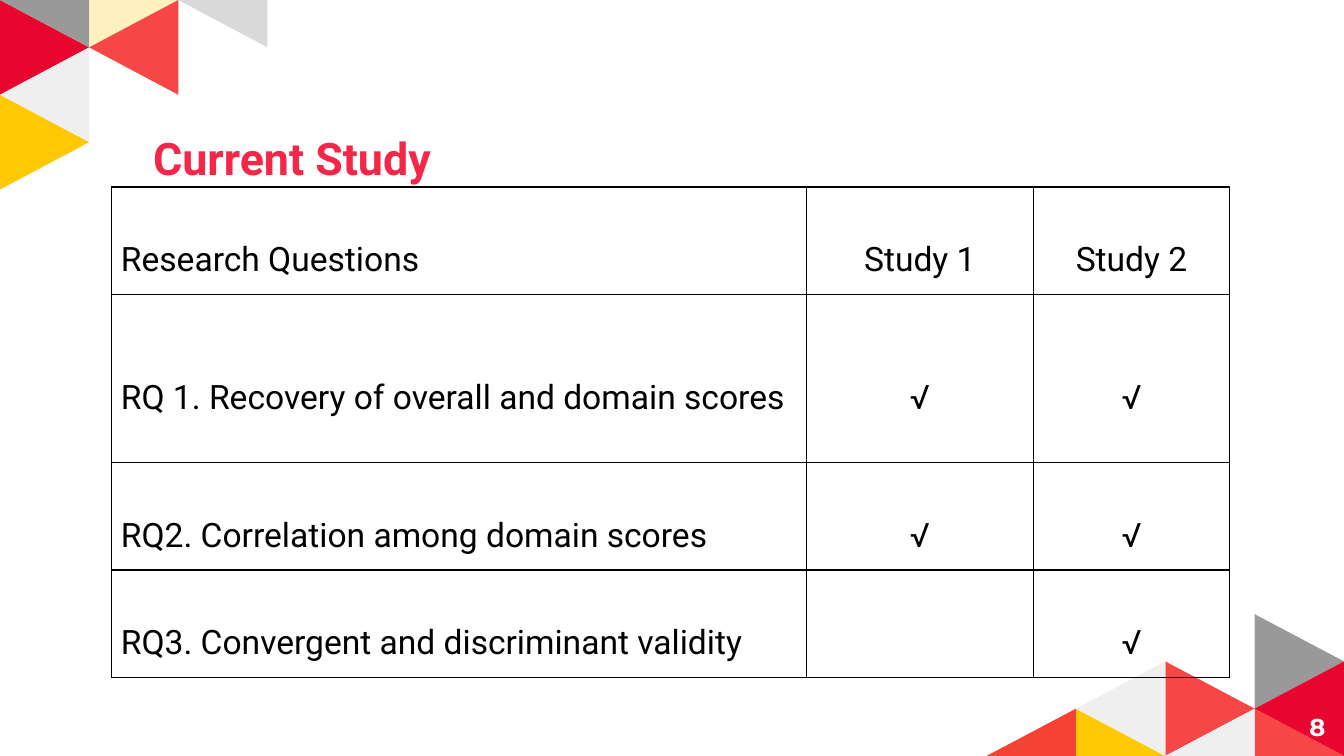
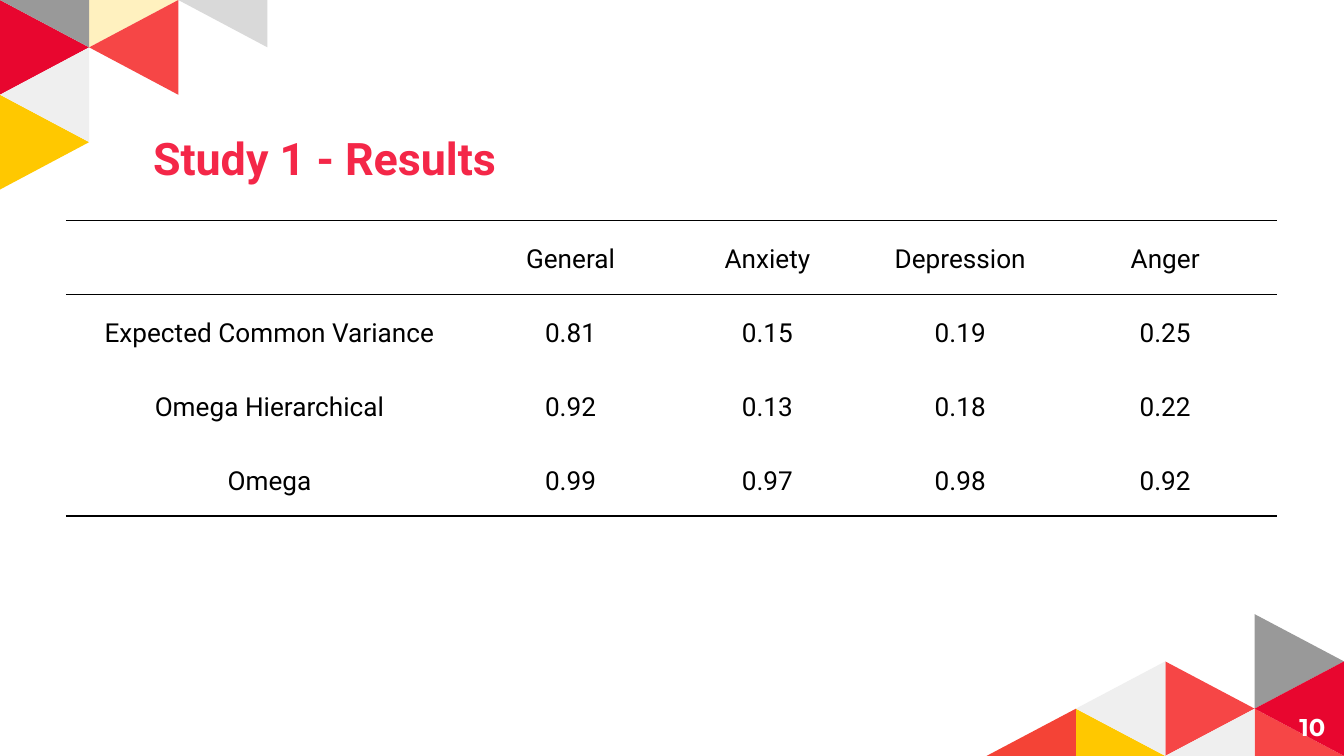
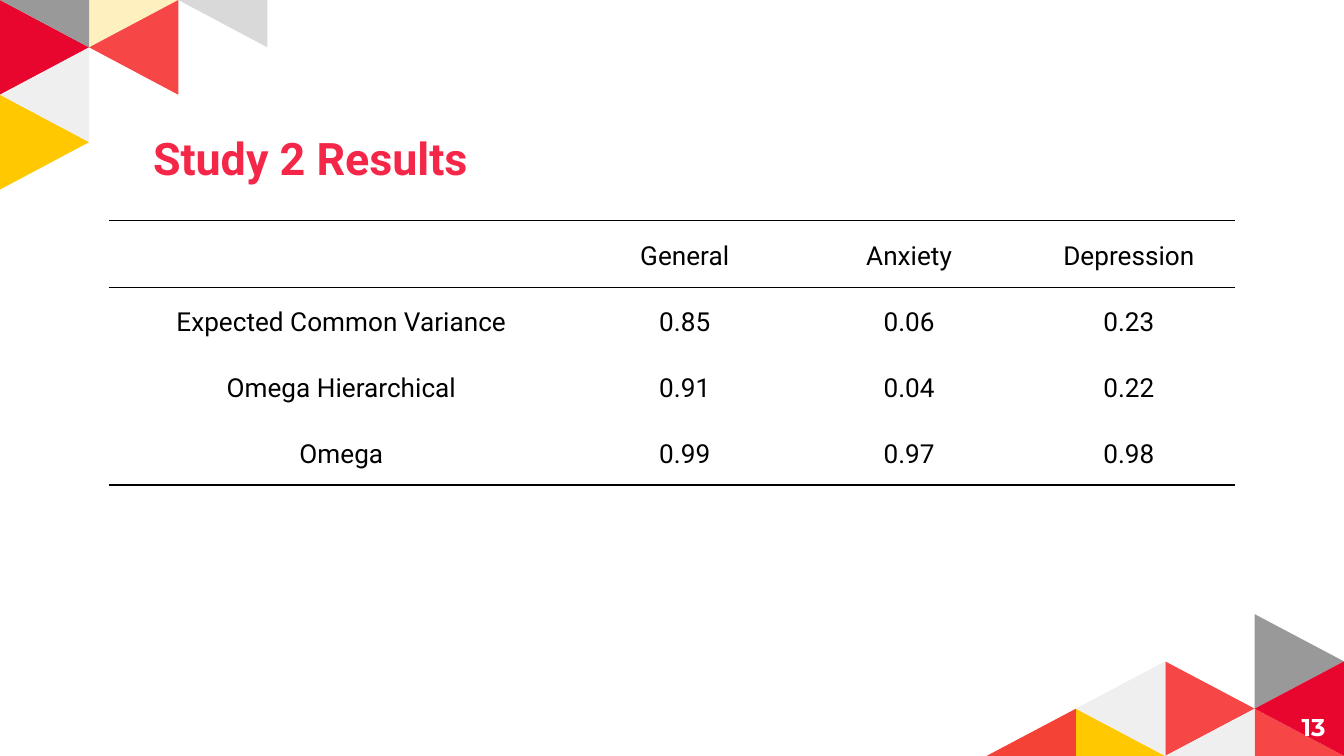
import dataclasses

import pptx
import pptx.dml.color
import pptx.enum.text
import pptx.oxml.ns
import pptx.util
from lxml import etree

Inches, Pt = pptx.util.Inches, pptx.util.Pt
ALIGN, ANCHOR = pptx.enum.text.PP_ALIGN, pptx.enum.text.MSO_ANCHOR
qn = pptx.oxml.ns.qn


@dataclasses.dataclass(frozen=True)
class Theme:
    grey: str = "999999"
    silver: str = "D9D9D9"
    pale: str = "EFEFEF"
    yellow: str = "FFC800"
    coral: str = "F64646"
    orange: str = "F44336"
    crimson: str = "E8062F"
    title: str = "F42748"
    text: str = "000000"
    white: str = "FFFFFF"
    body_font: str = "Roboto"
    number_font: str = "Montserrat"
    title_size: int = 24
    question_size: int = 18
    result_size: int = 14
    number_size: int = 13
    rule_width: float = 1


THEME = Theme()
WIDTH, HEIGHT = 10, 10 * 9 / 16

# Corner triangles: colour, opacity in percent, corners as (column, row) on the grid
TOP_TRIANGLES = [
    (THEME.crimson, 100, [(0, 0), (0, 2), (1, 1)]),
    (THEME.yellow, 100, [(0, 2), (0, 4), (1, 3)]),
    (THEME.yellow, 25, [(1, 0), (1, 1), (2, 0)]),
    (THEME.pale, 100, [(1, 1), (0, 2), (1, 3)]),
    (THEME.coral, 100, [(2, 0), (1, 1), (2, 2)]),
    (THEME.grey, 100, [(0, 0), (1, 1), (1, 0)]),
    (THEME.silver, 100, [(3, 0), (3, 1), (2, 0)]),
]
BOTTOM_TRIANGLES = [
    (THEME.grey, 100, [(3, 0), (3, 2), (4, 1)]),
    (THEME.yellow, 100, [(1, 2), (1, 3), (2, 3)]),
    (THEME.coral, 100, [(2, 1), (2, 3), (3, 2)]),
    (THEME.coral, 100, [(3, 2), (3, 3), (4, 3)]),
    (THEME.pale, 100, [(2, 1), (1, 2), (2, 3)]),
    (THEME.pale, 100, [(3, 2), (2, 3), (3, 3)]),
    (THEME.crimson, 100, [(4, 1), (3, 2), (4, 3)]),
    (THEME.orange, 100, [(1, 2), (0, 3), (1, 3)]),
]


def apply(target, formats):
    for name, value in formats.items():
        setattr(target, name, value)


def write(frame, words, color, paragraph_format, font_format):
    """Put one formatted paragraph into a text frame."""
    paragraph = frame.paragraphs[0]
    apply(paragraph, paragraph_format)
    run = paragraph.add_run()
    run.text = words
    apply(run.font, font_format)
    run.font.color.rgb = pptx.dml.color.RGBColor.from_string(color)


def add_corner(slide, box, columns, rows, triangles):
    """Fill a box with triangles whose corners lie on an even grid."""
    left, top, width, height = box
    corner = slide.shapes.add_group_shape()
    for color, opacity, points in triangles:
        start, *others = [(Inches(left + column * width / columns),
                           Inches(top + row * height / rows))
                          for column, row in points]
        outline = corner.shapes.build_freeform(*start)
        outline.add_line_segments(others, close=True)
        triangle = outline.convert_to_shape()
        triangle.shadow.inherit = False
        triangle.fill.solid()
        triangle.fill.fore_color.rgb = pptx.dml.color.RGBColor.from_string(color)
        triangle.line.fill.background()
        if opacity < 100:
            tint = next(triangle.element.iter(qn("a:srgbClr")))
            etree.SubElement(tint, qn("a:alpha"), val=str(opacity * 1000))


def add_text(slide, box, words, color, anchor, alignment, font_format):
    frame = slide.shapes.add_textbox(*map(Inches, box)).text_frame
    margins = dict.fromkeys(
        ("margin_left", "margin_top", "margin_right", "margin_bottom"), Inches(0.1))
    apply(frame, {"word_wrap": True, "vertical_anchor": anchor, **margins})
    write(frame, words, color, {"alignment": alignment}, font_format)


def add_frame(deck, title, number):
    """Start a slide with its corners, number and title."""
    slide = deck.slides.add_slide(deck.slide_layouts[6])
    add_corner(slide, (7.34, 4.57, WIDTH - 7.34, HEIGHT - 4.57), 4, 3, BOTTOM_TRIANGLES)
    add_corner(slide, (0, 0, 1.99, 1.41), 3, 4, TOP_TRIANGLES)
    add_text(slide, (9.36, 5.19, 0.6, 0.43), str(number), THEME.white,
             ANCHOR.MIDDLE, ALIGN.RIGHT,
             {"name": THEME.number_font, "size": Pt(THEME.number_size), "bold": True})
    add_text(slide, (1.04, 0.87, 7.91, 0.73), title, THEME.title,
             ANCHOR.TOP, ALIGN.LEFT,
             {"name": THEME.body_font, "size": Pt(THEME.title_size), "bold": True})
    return slide


def set_borders(cell, drawn_sides):
    properties = cell._tc.get_or_add_tcPr()
    for side in "LRTB":
        border = etree.SubElement(properties, qn(f"a:ln{side}"),
                                  w=str(Pt(THEME.rule_width)))
        if side in drawn_sides:
            paint = etree.SubElement(border, qn("a:solidFill"))
            etree.SubElement(paint, qn("a:srgbClr"), val=THEME.text)
        else:
            etree.SubElement(border, qn("a:noFill"))


def add_grid(slide, corner, widths, heights, records, rules, upright, first_align,
             size, paragraph_format):
    """Draw a table; rules lists the row boundaries that carry a line."""
    left, top = corner
    box = (left, top, sum(widths), sum(heights))
    grid = slide.shapes.add_table(len(heights), len(widths), *map(Inches, box)).table
    apply(grid, {"first_row": False, "horz_banding": False})
    for column, width in zip(grid.columns, widths):
        column.width = Inches(width)
    for row, height in zip(grid.rows, heights):
        row.height = Inches(height)
    for r, record in enumerate(records):
        sides = ("T" if r in rules else "") + ("B" if r + 1 in rules else "")
        for c, words in enumerate(record):
            cell = grid.cell(r, c)
            set_borders(cell, sides + ("LR" if upright else ""))
            cell.fill.background()
            apply(cell, {"vertical_anchor": ANCHOR.MIDDLE,
                         "margin_left": Inches(0.07), "margin_right": Inches(0.07),
                         "margin_top": Inches(0.1), "margin_bottom": Inches(0.1)})
            alignment = ALIGN.CENTER if c else first_align
            write(cell.text_frame, words, THEME.text,
                  {"alignment": alignment, **paragraph_format},
                  {"name": THEME.body_font, "size": Pt(size)})


def add_questions(slide, corner):
    """Research questions against the studies that answer them."""
    records = [
        ("Research Questions", "Study 1", "Study 2"),
        ("RQ 1. Recovery of overall and domain scores", "√", "√"),
        ("RQ2. Correlation among domain scores", "√", "√"),
        ("RQ3. Convergent and discriminant validity", "", "√"),
    ]
    add_grid(slide, corner, (5.17, 1.69, 1.46), (0.71, 1.25, 0.74, 0.74), records,
             range(5), True, ALIGN.LEFT, THEME.question_size, {"line_spacing": 2.0})


def add_results(slide, corner, widths, row_height, domains, values):
    """Reliability measures by domain, ruled above, below and under the header."""
    measures = ("Expected Common Variance", "Omega Hierarchical", "Omega")
    records = [("", *domains)]
    records += [(measure, *(f"{value:.2f}" for value in row))
                for measure, row in zip(measures, values)]
    add_grid(slide, corner, widths, [row_height] * len(records), records,
             (0, 1, len(records)), False, ALIGN.CENTER, THEME.result_size,
             {"line_spacing": 1.15, "space_after": Pt(10)})


def main():
    deck = pptx.Presentation()
    apply(deck, {"slide_width": Inches(WIDTH), "slide_height": Inches(HEIGHT)})

    add_questions(add_frame(deck, "Current Study", 8), (0.83, 1.39))

    add_results(add_frame(deck, "Study 1 - Results", 10), (0.49, 1.64),
                (3.03, 1.45, 1.48, 1.39, 1.66), 0.55,
                ("General", "Anxiety", "Depression", "Anger"),
                [(0.81, 0.15, 0.19, 0.25),
                 (0.92, 0.13, 0.18, 0.22),
                 (0.99, 0.97, 0.98, 0.92)])

    add_results(add_frame(deck, "Study 2 Results", 13), (0.81, 1.64),
                (3.46, 1.65, 1.69, 1.58), 0.49,
                ("General", "Anxiety", "Depression"),
                [(0.85, 0.06, 0.23),
                 (0.91, 0.04, 0.22),
                 (0.99, 0.97, 0.98)])

    deck.save("out.pptx")


if __name__ == "__main__":
    main()
